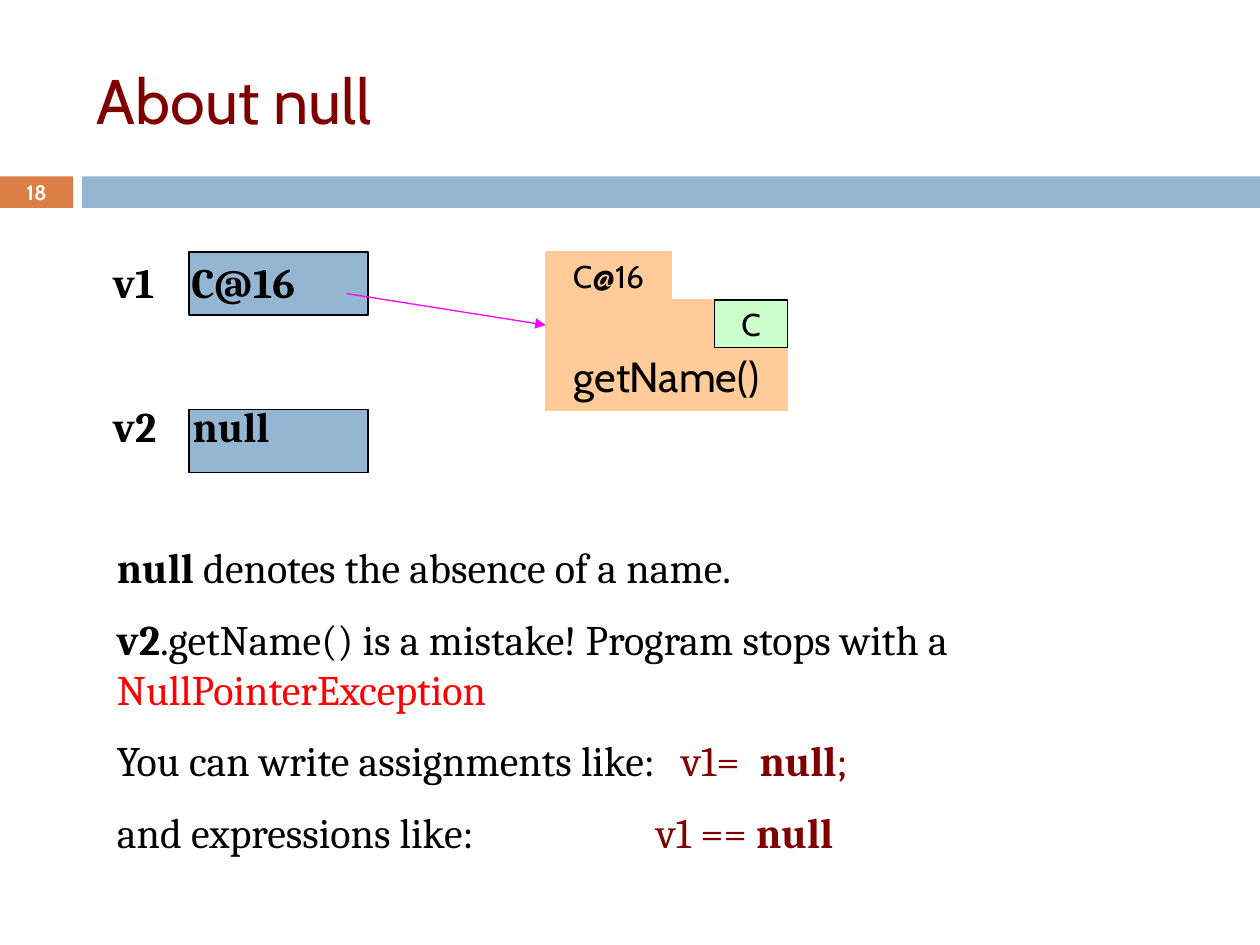
import pptx
import pptx.util
import pptx.dml.color
import pptx.enum.shapes
import pptx.enum.text
import pptx.oxml
import pptx.oxml.ns
import lxml.etree

Inches = pptx.util.Inches
Pt = pptx.util.Pt
Align = pptx.enum.text.PP_ALIGN
Anchor = pptx.enum.text.MSO_ANCHOR
qn = pptx.oxml.ns.qn
hues = {"black": "000000", "white": "FFFFFF", "maroon": "800000", "red": "FF0000",
        "blue": "94B6D2", "orange": "DD8047", "peach": "FFCC99",
        "green": "CCFFCC", "pink": "FF00FF"}


def color(name):
    return pptx.dml.color.RGBColor.from_string(hues[name])


def write(para, runs, font, size, align=Align.LEFT, tabs=()):
    para.alignment = align
    for text, hue, bold in runs:
        run = para.add_run()
        run.text = text
        run.font.name = font
        run.font.size = Pt(size)
        run.font.bold = bold
        run.font.color.rgb = color(hue)
    if tabs:
        stops = lxml.etree.SubElement(para._p.get_or_add_pPr(), qn("a:tabLst"))
        for tab in tabs:
            lxml.etree.SubElement(stops, qn("a:tab"), pos=str(Inches(tab)), algn="l")


deck = pptx.Presentation()
deck.slide_width = Inches(10)
deck.slide_height = Inches(7.5)
slide = deck.slides.add_slide(deck.slide_layouts[6])
shapes = slide.shapes

rects = [
    (0, 1.4, 0.58, 0.25, "orange", None, "", 0),
    (0.65, 1.4, 9.35, 0.25, "blue", None, "", 0),
    (1.5, 2, 1.42, 0.5, "blue", "black", "", 0),
    (1.5, 3.25, 1.42, 0.5, "blue", "black", "", 0),
    (4.33, 2, 1, 0.38, "peach", "peach", "C@16", 18),
    (4.33, 2.38, 1.92, 0.88, "peach", "peach", "getName()", 24),
    (5.67, 2.38, 0.58, 0.38, "green", "black", "C", 18),
]
for left, top, width, height, fill, line, text, size in rects:
    rect = shapes.add_shape(pptx.enum.shapes.MSO_SHAPE.RECTANGLE,
                            Inches(left), Inches(top), Inches(width), Inches(height))
    rect.shadow.inherit = False
    rect.fill.solid()
    rect.fill.fore_color.rgb = color(fill)
    if line:
        rect.line.color.rgb = color(line)
        rect.line.width = Pt(0.75)
    else:
        rect.line.fill.background()
    if text:
        frame = rect.text_frame
        frame.word_wrap = False
        frame.vertical_anchor = Anchor.MIDDLE
        if text == "getName()":
            frame.vertical_anchor = Anchor.BOTTOM
            frame.margin_bottom = Inches(0.08)
        write(frame.paragraphs[0], [(text, "black", False)], "Cabin", size, Align.CENTER)

arrow = shapes.add_connector(pptx.enum.shapes.MSO_CONNECTOR.STRAIGHT,
                             Inches(2.75), Inches(2.33), Inches(4.33), Inches(2.58))
arrow.line.color.rgb = color("pink")
arrow.line.width = Pt(0.75)
lxml.etree.SubElement(arrow.line._get_or_add_ln(), qn("a:tailEnd"), type="triangle")
lxml.etree.SubElement(arrow._element.spPr, qn("a:effectLst"))

title = shapes.add_textbox(Inches(0.67), Inches(0.25), Inches(8.92), Inches(1.08)).text_frame
title.word_wrap = True
title.vertical_anchor = Anchor.MIDDLE
write(title.paragraphs[0], [("About null", "maroon", False)], "Cabin", 36)

page = shapes.add_textbox(0, Inches(1.39), Inches(0.58), Inches(0.27)).text_frame
page.word_wrap = True
page.vertical_anchor = Anchor.MIDDLE
page.margin_top = page.margin_bottom = 0
write(page.paragraphs[0], [("18", "white", True)], "Cabin", 11.9, Align.CENTER)

names = [([("v1\tC@16", "black", True)], [0.62]),
         ([("v2\tnull", "black", True)], [0.63])]
notes = [
    ([("null", "black", True), (" denotes the absence of a name.", "black", False)], []),
    ([("v2", "black", True),
      (".getName() is a mistake! Program stops with a ", "black", False),
      ("NullPointerException", "red", False)], []),
    ([("You can write assignments like:\t", "black", False), ("v1=\t", "maroon", False),
      ("null", "maroon", True), (";", "maroon", False)], [4.48, 5.1]),
    ([("and expressions like:\t", "black", False), ("v1 == ", "maroon", False),
      ("null", "maroon", True)], [4.28]),
]
blocks = [(0.8, 1.99, 2.12, 1.6, 53, names), (0.83, 4.25, 7.92, 2.73, 12, notes)]
for left, top, width, height, gap, lines in blocks:
    frame = shapes.add_textbox(Inches(left), Inches(top), Inches(width), Inches(height)).text_frame
    frame.word_wrap = True
    for row, (runs, tabs) in enumerate(lines):
        para = frame.add_paragraph() if row else frame.paragraphs[0]
        para.space_before = Pt(gap if row else 0)
        write(para, runs, "Cambria", 24, tabs=tabs)

deck.save("out.pptx")
